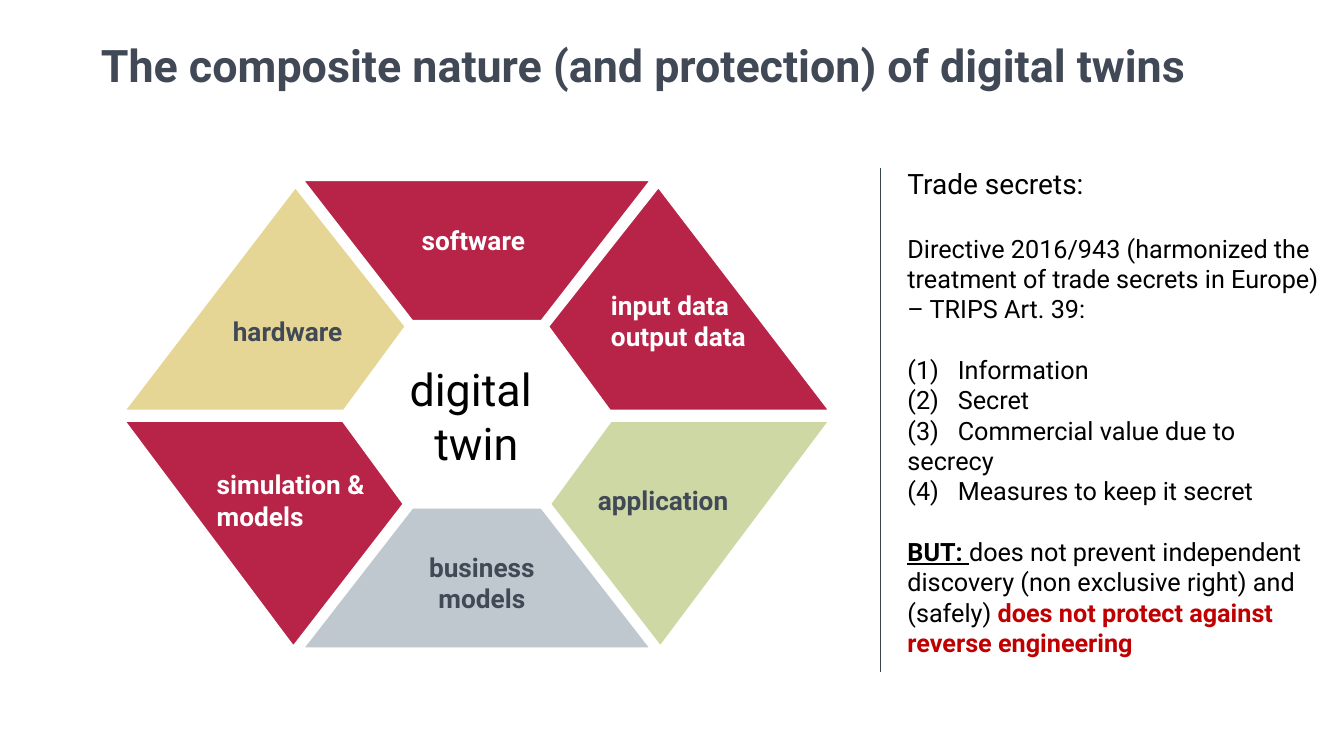
from dataclasses import dataclass

from lxml.etree import SubElement
from pptx import Presentation
from pptx.dml.color import RGBColor
from pptx.enum.shapes import MSO_CONNECTOR, MSO_SHAPE
from pptx.enum.text import MSO_ANCHOR as Anchor, MSO_AUTO_SIZE as AutoSize, PP_ALIGN as Align
from pptx.oxml.ns import qn
from pptx.util import Inches, Pt


@dataclass(frozen=True)
class Theme:
    font: str = "Roboto"
    slate: str = "404955"
    rule: str = "39454C"
    black: str = "000000"
    white: str = "FFFFFF"
    crimson: str = "B82348"
    sand: str = "E6D695"
    green: str = "CED8A4"
    silver: str = "BFC8CE"
    alert: str = "C00000"
    title: float = 32
    lead: float = 20
    label: float = 18.7
    body: float = 18


THEME = Theme()

# Outlines in inches, measured from the centre of the ring
TRAPEZOID = [(-0.64, -0.93), (0.64, -0.93), (1.72, -2.32), (-1.72, -2.32)]
UPPER_WEDGE = [(-1.32, -0.04), (-0.71, -0.87), (-1.8, -2.25), (-3.49, -0.04)]
LOWER_WEDGE = [(-1.33, 0.07), (-0.73, 0.89), (-1.82, 2.3), (-3.49, 0.07)]

# outline, horizontal flip, vertical flip, fill
SEGMENTS = [
    (TRAPEZOID, 1, -1, THEME.silver),
    (TRAPEZOID, 1, 1, THEME.crimson),
    (UPPER_WEDGE, 1, 1, THEME.sand),
    (LOWER_WEDGE, 1, 1, THEME.crimson),
    (UPPER_WEDGE, -1, 1, THEME.crimson),
    (LOWER_WEDGE, -1, 1, THEME.green),
]

# lines, box measured from the centre of the ring, colour, alignment
LABELS = [
    (["input data", "output data"], (1.33, -1.55, 1.5, 1.24), THEME.white, Align.LEFT),
    (["application"], (1.2, 0.23, 1.76, 1.24), THEME.slate, Align.LEFT),
    (["business", "models"], (-0.7, 1.28, 1.5, 0.78), THEME.slate, Align.CENTER),
    (["software"], (-1.18, -2.05, 2.29, 0.64), THEME.white, Align.CENTER),
    (["hardware"], (-2.42, -1.45, 1.5, 1.24), THEME.slate, Align.LEFT),
    (["simulation &", "models"], (-2.58, 0.23, 1.76, 1.24), THEME.white, Align.LEFT),
]

CONDITIONS = [
    "Information",
    "Secret",
    "Commercial value due to secrecy",
    "Measures to keep it secret",
]


def rgb(color):
    return RGBColor.from_string(color)


def place(shape, box):
    shape.left, shape.top, shape.width, shape.height = map(Inches, box)


def prepare_frame(shape, anchor=Anchor.TOP, inset=0):
    frame = shape.text_frame
    frame.word_wrap = True
    frame.auto_size = AutoSize.NONE
    frame.vertical_anchor = anchor
    frame.margin_left = frame.margin_right = Inches(inset)
    frame.margin_top = frame.margin_bottom = Inches(inset)
    return frame


def next_para(frame):
    """Return the unused first paragraph, or a new one after the last."""
    first = frame.paragraphs[0]
    return frame.add_paragraph() if first.runs else first


def write(para, text, size=THEME.body, color=THEME.black, bold=False, underline=False):
    span = para.add_run()
    span.text = text
    font = span.font
    font.name, font.size = THEME.font, Pt(size)
    font.bold, font.underline = bold, underline
    font.color.rgb = rgb(color)


def write_lines(frame, lines, align, **style):
    for line in lines:
        para = next_para(frame)
        para.alignment = align
        write(para, line, **style)


def paint(shape, fill):
    shape.shadow.inherit = False
    shape.fill.solid()
    shape.fill.fore_color.rgb = rgb(fill)
    shape.line.color.rgb = rgb(THEME.white)
    shape.line.width = Pt(1)


def add_title(page, box):
    title = page.shapes.title
    place(title, box)
    para = prepare_frame(title).paragraphs[0]
    para.alignment = Align.LEFT
    para.line_spacing = Pt(37.3)
    write(para, "The composite nature (and protection) of digital twins",
          size=THEME.title, color=THEME.slate, bold=True)


def add_ring(page, center_x, center_y):
    """Draw the six components around the hexagon of the digital twin."""
    ring = page.shapes.add_group_shape().shapes

    core_box = (center_x - 1.22, center_y - 0.79, 2.43, 1.6)
    core = ring.add_shape(MSO_SHAPE.HEXAGON, *map(Inches, core_box))
    core.adjustments[0] = 0.415
    paint(core, THEME.white)
    write_lines(prepare_frame(core, Anchor.MIDDLE, 0.08), ["digital ", "twin"],
                Align.CENTER, size=THEME.title)

    for outline, flip_x, flip_y, fill in SEGMENTS:
        points = [(Inches(center_x + flip_x * x), Inches(center_y + flip_y * y))
                  for x, y in outline]
        builder = ring.build_freeform(*points[0])
        builder.add_line_segments(points[1:], close=True)
        paint(builder.convert_to_shape(), fill)

    for lines, (x, y, width, height), color, align in LABELS:
        box = (center_x + x, center_y + y, width, height)
        label = ring.add_textbox(*map(Inches, box))
        write_lines(prepare_frame(label, Anchor.MIDDLE), lines, align,
                    size=THEME.label, color=color, bold=True)


def add_divider(page, x, top, height):
    ends = map(Inches, (x, top, x, top + height))
    divider = page.shapes.add_connector(MSO_CONNECTOR.STRAIGHT, *ends)
    divider.line.color.rgb = rgb(THEME.rule)
    divider.line.width = Pt(0.75)
    SubElement(divider._element.spPr, qn("a:effectLst"))


def add_body_para(frame, gap=0, tab=None):
    """Start an unbulleted paragraph, with a gap above in points and a tab stop in inches."""
    para = next_para(frame)
    para.alignment = Align.LEFT
    para.space_before = Pt(gap)
    props = para._p.get_or_add_pPr()
    props.set("marL", "0")
    props.set("indent", "0")
    SubElement(props, qn("a:buNone"))
    if tab:
        stops = SubElement(props, qn("a:tabLst"))
        SubElement(stops, qn("a:tab"), pos=str(Inches(tab)), algn="l")
    return para


def add_trade_secrets(page, box):
    body = page.placeholders[1]
    place(body, box)
    frame = prepare_frame(body)
    write(add_body_para(frame), "Trade secrets:", size=THEME.lead)
    write(add_body_para(frame, gap=23.5),
          "Directive 2016/943 (harmonized the treatment of trade secrets in Europe)"
          " – TRIPS Art. 39:")
    for number, condition in enumerate(CONDITIONS, 1):
        para = add_body_para(frame, gap=22 if number == 1 else 0, tab=0.4)
        write(para, f"({number})\t{condition}")
    caveat = add_body_para(frame, gap=22)
    write(caveat, "BUT: ", bold=True, underline=True)
    write(caveat, "does not prevent independent discovery (non exclusive right) and (safely) ")
    write(caveat, "does not protect against reverse engineering", color=THEME.alert, bold=True)


def main():
    deck = Presentation()
    deck.slide_width, deck.slide_height = Inches(13.33), Inches(7.5)
    page = deck.slides.add_slide(deck.slide_layouts[1])
    add_title(page, (1, 0.39, 11.44, 0.59))
    add_ring(page, 4.73, 4.11)
    add_divider(page, 8.73, 1.67, 5)
    add_trade_secrets(page, (9, 1.65, 4.1, 5))
    deck.save("out.pptx")


if __name__ == "__main__":
    main()
